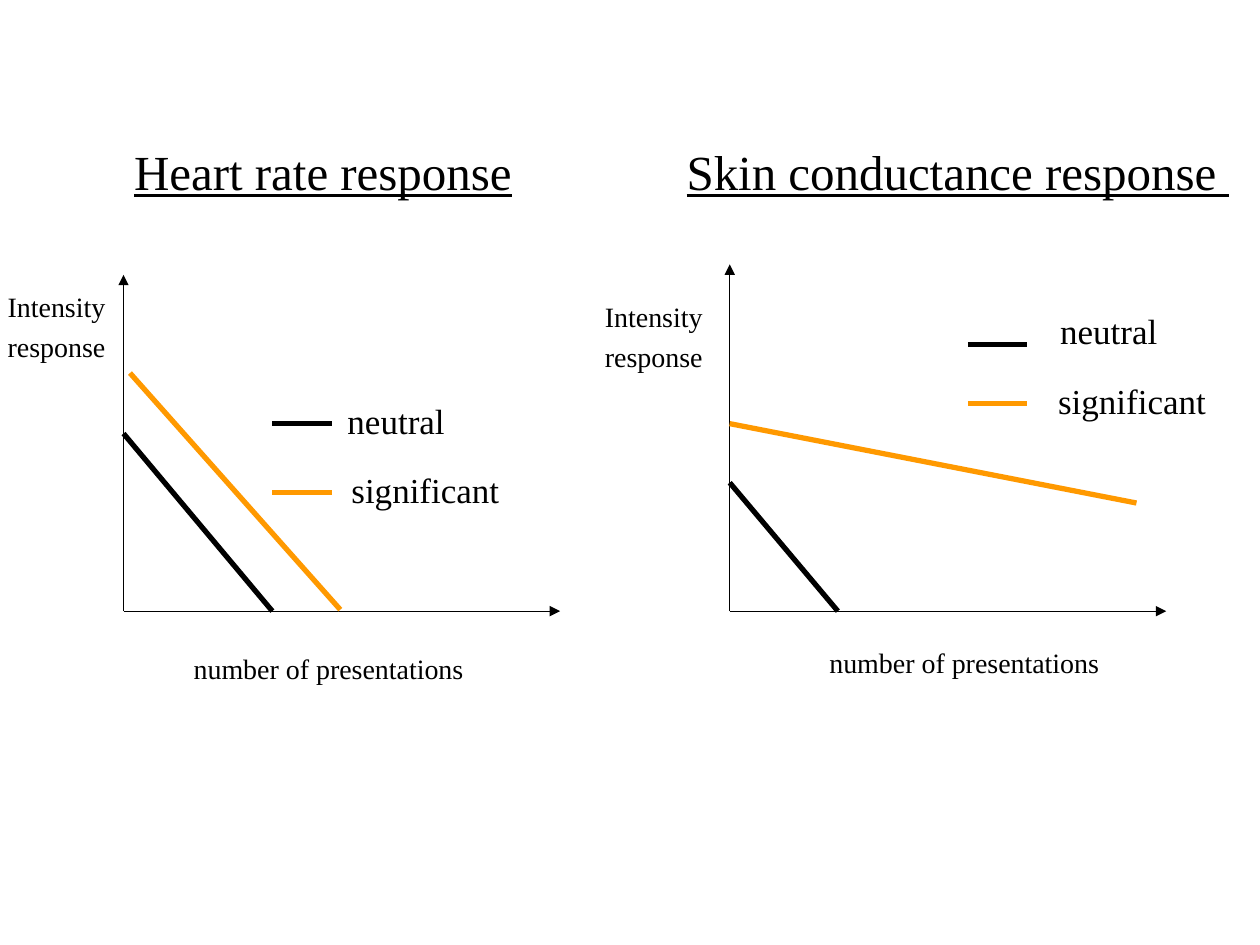
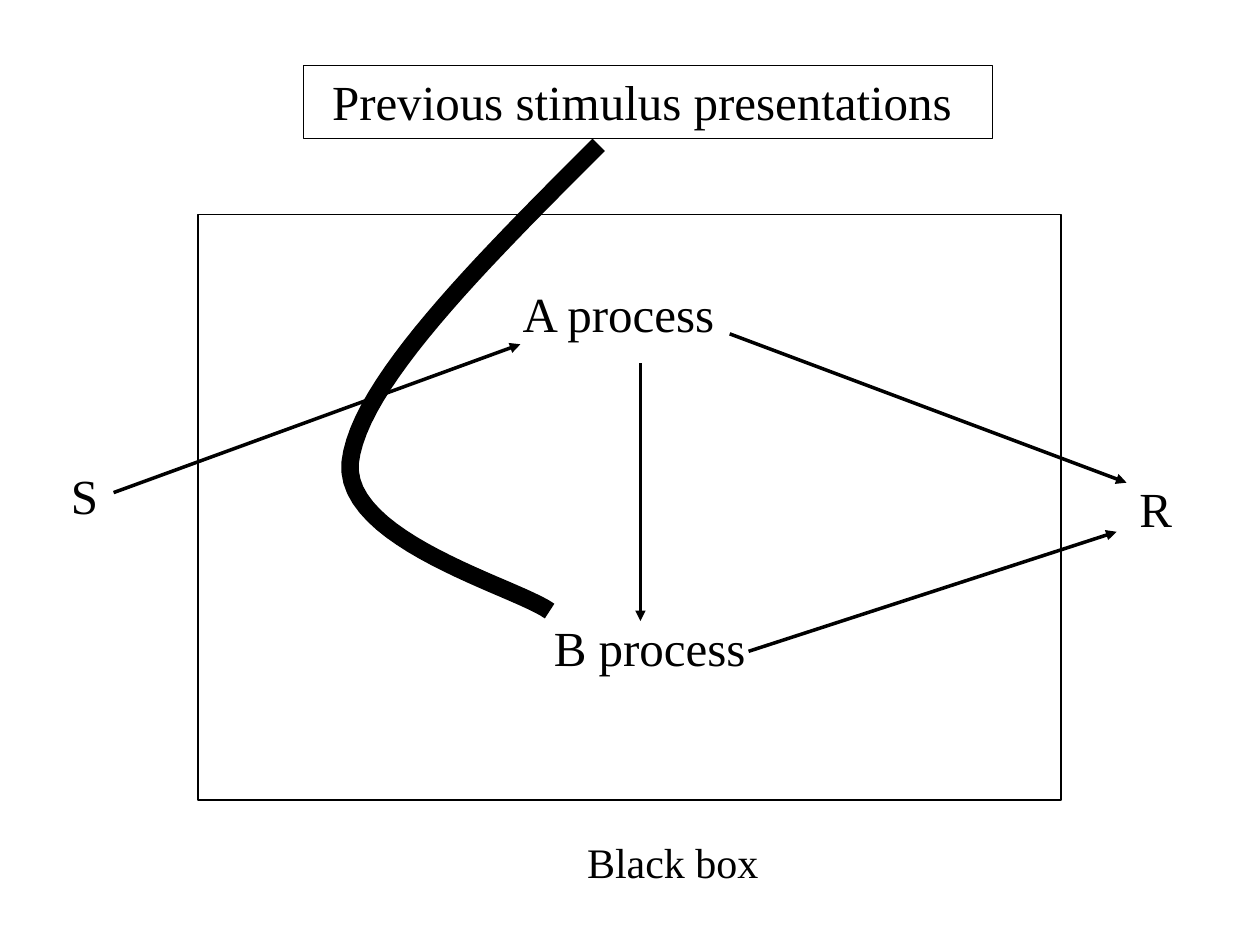
from lxml import etree
from pptx import Presentation
from pptx import util as u
from pptx.dml.color import RGBColor
from pptx.enum import shapes, text
from pptx.oxml import ns

FONT = "Times New Roman"
BLACK, ORANGE = "000000", "FF9900"
SERIES_COLORS = {"neutral": BLACK, "significant": ORANGE}
HEADING, NOTE, LEGEND, CAPTION = 28, 16, 20, 24
THIN, ARROW, SERIES, CURVE = 0.75, 2, 3, 10
KEY_LENGTH = 1.2

# Offsets in cm from the origin of the axes, with y pointing up.
# Labels are (x, y of the top, width).
HEART_RATE = {
    "heading": ("Heart rate response ", (-0.08, 9.6, 8.2)),
    "x_label": (0.79, -0.69, 6.83),
    "y_label": (-2.69, 6.6, 2.82),
    "series": {"neutral": ((0, 3.58), (3, 0)),
               "significant": ((0.13, 4.8), (4.37, 0.03))},
    "keys": {"neutral": (3, 3.78), "significant": (3, 2.39)},
    "legend": {"neutral": (4.19, 4.39, 2.79),
               "significant": (4.22, 3, 3.91)},
}
SKIN_CONDUCTANCE = {
    "heading": ("Skin conductance response ", (-1.22, 9.6, 11.63)),
    "x_label": (1.6, -0.56, 6.4),
    "y_label": (-2.87, 6.4, 2.82),
    "series": {"neutral": ((0, 2.59), (2.18, 0)),
               "significant": ((0, 3.78), (8.2, 2.18))},
    "keys": {"neutral": (4.8, 5.38), "significant": (4.8, 4.19)},
    "legend": {"neutral": (5.99, 6.2, 3.48),
               "significant": (5.99, 4.8, 4.42)},
}

# Offsets in cm from the top left corner of the black box.
PROCESS_LABELS = [
    ("S ", (-2.82, 4.93, 1.07), HEADING),
    ("R ", (18.72, 5.21, 1.17), HEADING),
    ("A process ", (6.2, 1.27, 4.8), HEADING),
    ("B process ", (5.23, 8, 8), HEADING),
    ("Black box ", (6.91, 12.42, 5.54), CAPTION),
]
PROCESS_ARROWS = [
    ((-1.7, 5.61), (6.5, 2.62)),     # S to A
    ((8.92, 3), (8.92, 8.2)),        # A to B
    ((10.72, 2.41), (18.72, 5.41)),  # A to R
    ((11.1, 8.81), (18.52, 6.4)),    # B to R
]
HISTORY_BOX = (2.13, -3, 13.89, 1.47)
HISTORY_CURVE = [
    ((8.08, -1.4), (5.66, 1.02), (3.25, 3.43), (3.07, 5)),
    ((3.07, 5), (2.92, 6.58), (6.43, 7.52), (7.09, 8)),
]


def rgb(color):
    return RGBColor.from_string(color)


def set_outline(shape, color, width):
    shape.line.color.rgb = rgb(color)
    shape.line.width = u.Pt(width)


def write(shape, content, size, underline=None):
    """Fill a shape with centred text, one paragraph for each line."""
    frame = shape.text_frame
    frame.word_wrap = False
    frame.vertical_anchor = text.MSO_ANCHOR.TOP
    frame.text = content
    font_format = {"name": FONT, "size": u.Pt(size), "underline": underline}
    for number, paragraph in enumerate(frame.paragraphs):
        paragraph.alignment = text.PP_ALIGN.CENTER
        if number:
            paragraph.space_before = u.Pt(size / 5)
        for attribute, value in font_format.items():
            setattr(paragraph.font, attribute, value)
            for run in paragraph.runs:
                setattr(run.font, attribute, value)
        for run in paragraph.runs:
            run.font.color.rgb = rgb(BLACK)


def add_label(slide, content, left, top, width, size, underline=None):
    lines = content.count("\n") + 1
    height = u.Pt(size * 1.2 * lines) + u.Cm(0.25)
    label = slide.shapes.add_textbox(u.Cm(left), u.Cm(top), u.Cm(width), height)
    write(label, content, size, underline)


def add_line(slide, start, end, color, width, arrow=False):
    line = slide.shapes.add_connector(
        shapes.MSO_CONNECTOR.STRAIGHT, *(u.Cm(v) for v in (*start, *end)))
    set_outline(line, color, width)
    if arrow:
        etree.SubElement(line.line._get_or_add_ln(), ns.qn("a:tailEnd"),
                         type="triangle")
    etree.SubElement(line._element.spPr, ns.qn("a:effectLst"))


def add_frame(slide, left, top, width, height):
    frame = slide.shapes.add_shape(
        shapes.MSO_SHAPE.RECTANGLE,
        *(u.Cm(v) for v in (left, top, width, height)))
    frame.shadow.inherit = False
    frame.fill.background()
    set_outline(frame, BLACK, THIN)
    return frame


def bezier_point(controls, t):
    weights = ((1 - t) ** 3, 3 * t * (1 - t) ** 2, 3 * t ** 2 * (1 - t), t ** 3)
    return tuple(sum(w * c for w, c in zip(weights, axis))
                 for axis in zip(*controls))


def add_curve(slide, segments, color, width, steps=24):
    """Draw joined cubic Bézier segments as one open outline."""
    points = [segments[0][0]]
    for controls in segments:
        points += [bezier_point(controls, i / steps)
                   for i in range(1, steps + 1)]
    (start_x, start_y), *others = [(u.Cm(x), u.Cm(y)) for x, y in points]
    builder = slide.shapes.build_freeform(start_x, start_y)
    builder.add_line_segments(others, close=False)
    curve = builder.convert_to_shape()
    curve.shadow.inherit = False
    curve.fill.background()
    set_outline(curve, color, width)


def response_panel(slide, box, panel):
    """Draw axes filling the box, with their series, legend and labels."""
    left, top, width, height = box

    def at(x, y):
        return left + x, top + height - y

    def label(content, place, size, underline=None):
        x, y, label_width = place
        add_label(slide, content, *at(x, y), label_width, size, underline)

    for axis_end in ((width, 0), (0, height)):
        add_line(slide, at(0, 0), at(*axis_end), BLACK, THIN, arrow=True)
    for name, color in SERIES_COLORS.items():
        start, end = panel["series"][name]
        add_line(slide, at(*start), at(*end), color, SERIES)
        x, y = panel["keys"][name]
        add_line(slide, at(x, y), at(x + KEY_LENGTH, y), color, SERIES)
        label(name + " ", panel["legend"][name], LEGEND)
    label(*panel["heading"], HEADING, underline=True)
    label("number of presentations ", panel["x_label"], NOTE)
    label("Intensity \nresponse ", panel["y_label"], NOTE)


def process_diagram(slide, box):
    """Draw the black box with its processes, input, output and history."""
    left, top = box[:2]

    def at(x, y):
        return left + x, top + y

    add_frame(slide, *box)
    x, y, *size = HISTORY_BOX
    history = add_frame(slide, *at(x, y), *size)
    write(history, "Previous stimulus presentations ", HEADING)
    for content, (x, y, width), font_size in PROCESS_LABELS:
        add_label(slide, content, *at(x, y), width, font_size)
    for start, end in PROCESS_ARROWS:
        add_line(slide, at(*start), at(*end), BLACK, ARROW, arrow=True)
    add_curve(slide, [[at(*point) for point in controls]
                      for controls in HISTORY_CURVE], BLACK, CURVE)


def main():
    deck = Presentation()
    deck.slide_width, deck.slide_height = u.Cm(25.4), u.Cm(19.05)
    blank = deck.slide_layouts[6]

    responses = deck.slides.add_slide(blank)
    response_panel(responses, (2.49, 5.54, 8.8, 6.78), HEART_RATE)
    response_panel(responses, (14.71, 5.33, 8.8, 6.99), SKIN_CONDUCTANCE)

    process_diagram(deck.slides.add_slide(blank), (3.99, 4.32, 17.4, 11.81))
    deck.save("out.pptx")


if __name__ == "__main__":
    main()
